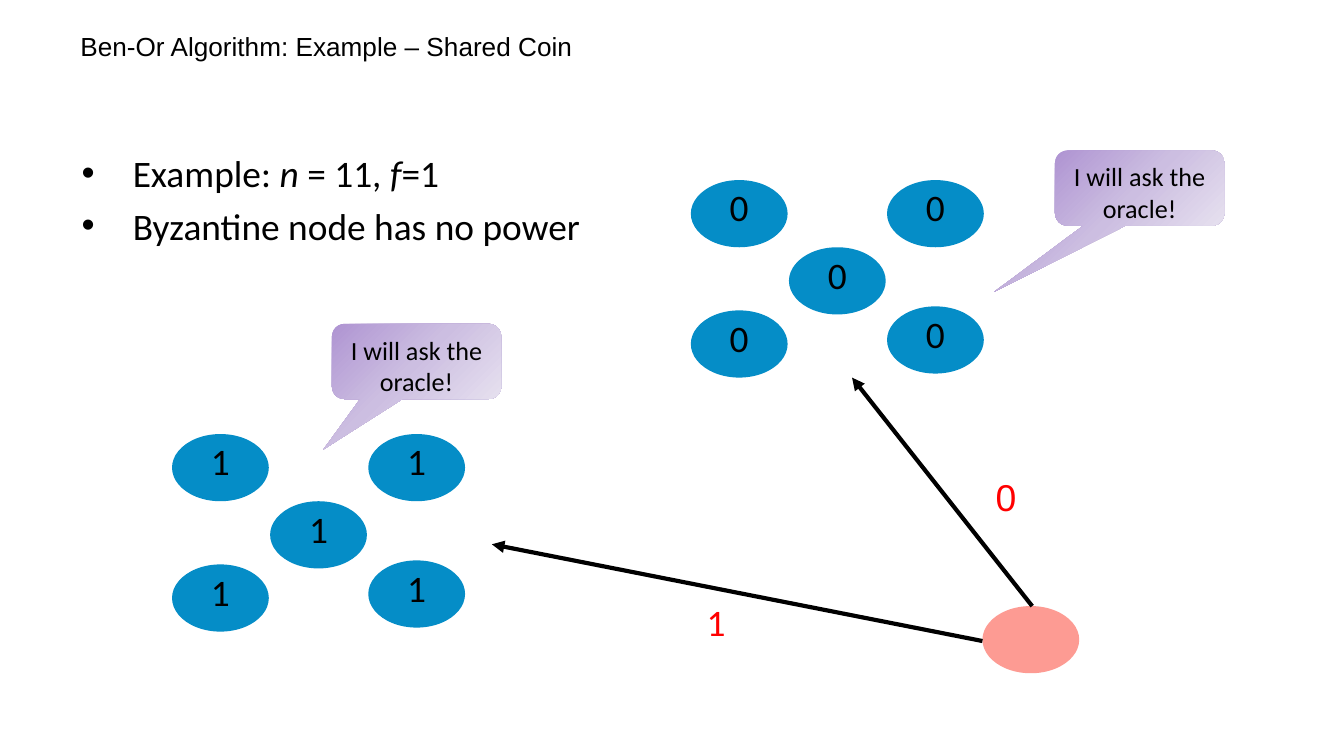
from copy import deepcopy

from lxml import etree
from pptx import Presentation
from pptx.dml.color import RGBColor
from pptx.enum.shapes import MSO_CONNECTOR, MSO_SHAPE
from pptx.enum.text import MSO_ANCHOR, PP_ALIGN
from pptx.oxml.ns import qn
from pptx.util import Inches, Pt

BLACK = RGBColor(0x00, 0x00, 0x00)
RED = RGBColor(0xFF, 0x00, 0x00)
BLUE = RGBColor(0x05, 0x8D, 0xC7)
PINK = RGBColor(0xFD, 0x9B, 0x93)
LILACS = [RGBColor(0xAF, 0x94, 0xD2), RGBColor(0xCC, 0xBE, 0xE1), RGBColor(0xE6, 0xE0, 0xEF)]
ELLIPSE, CALLOUT = MSO_SHAPE.OVAL, MSO_SHAPE.ROUNDED_RECTANGULAR_CALLOUT
STRAIGHT = MSO_CONNECTOR.STRAIGHT
CENTER, LEFT = PP_ALIGN.CENTER, PP_ALIGN.LEFT
TOP, MIDDLE = MSO_ANCHOR.TOP, MSO_ANCHOR.MIDDLE

# Node grid: outer nodes stand two columns apart, one node in the middle
COL, NODE_W, NODE_H = 0.73, 0.72, 0.5
NODES = [(2, 0.94), (2, 0), (0, 0.97), (0, 0), (1, 0.5)]

# A 16:9 slide
prs = Presentation()
prs.slide_width = Inches(10)
prs.slide_height = prs.slide_width * 9 // 16
s = prs.slides.add_slide(prs.slide_layouts[6])


def add_text(sp, paragraphs, size, font="Calibri", color=BLACK, align=CENTER, anchor=TOP, wrap=True):
    """Fill a shape with paragraphs, each a list of (text, italic) runs."""
    tf = sp.text_frame
    tf.word_wrap, tf.vertical_anchor = wrap, anchor
    for i, runs in enumerate(paragraphs):
        p = tf.paragraphs[0] if i == 0 else tf.add_paragraph()
        p.alignment = align
        for text, italic in runs:
            r = p.add_run()
            r.text = text
            r.font.size, r.font.name, r.font.italic = Pt(size), font, italic
            r.font.color.rgb = color
    return tf


def add_shape(kind, x, y, w, h):
    """Add a preset shape without shadow or outline."""
    sp = s.shapes.add_shape(kind, Inches(x), Inches(y), Inches(w), Inches(h))
    sp.shadow.inherit = False
    sp.line.fill.background()
    return sp


# Bullets, starting one line below the top of the box
sp = s.shapes.add_textbox(Inches(0.51), Inches(0.69), Inches(9.14), Inches(4.53))
tf = add_text(sp, [
    [("Example: ", False), ("n", True), (" = 11, ", False), ("f", True), ("=1", False)],
    [("Byzantine node has no power", False)],
], 20, align=LEFT)
tf.margin_top = Inches(0.43)
for i, p in enumerate(tf.paragraphs):
    p.space_before = Pt(4 * i)
    pPr = p._p.get_or_add_pPr()
    pPr.set("marL", str(Inches(0.38)))
    pPr.set("indent", str(-Inches(0.38)))
    etree.SubElement(pPr, qn("a:buFont"), typeface="Arial")
    etree.SubElement(pPr, qn("a:buChar"), char="•")

# Title
sp = s.shapes.add_textbox(Inches(0.5), Inches(0.14), Inches(9), Inches(0.4))
add_text(sp, [[("Ben-Or Algorithm: Example – Shared Coin", False)]], 14, "Arial", align=LEFT, anchor=MIDDLE)

# Byzantine node
sp = add_shape(ELLIPSE, 7.31, 4.51, NODE_W, NODE_H)
sp.fill.solid()
sp.fill.fore_color.rgb = PINK

# Two clusters of honest nodes
for value, x, y in [("1", 1.28, 3.23), ("0", 5.14, 1.34)]:
    for col, dy in NODES:
        sp = add_shape(ELLIPSE, x + col * COL, y + dy, NODE_W, NODE_H)
        sp.fill.solid()
        sp.fill.fore_color.rgb = BLUE
        tf = add_text(sp, [[(value, False)]], 20, anchor=MIDDLE)
        tf.margin_top, tf.margin_bottom = 0, Inches(0.1)

# Messages from the Byzantine node, each with its value
for x1, y1, x2, y2, value, font, x, y in [
    (7.31, 4.77, 3.66, 4.05, "1", "Calibri", 5.16, 4.41),
    (7.68, 4.51, 6.34, 2.81, "0", "Arial", 7.31, 3.48),
]:
    line = s.shapes.add_connector(STRAIGHT, Inches(x1), Inches(y1), Inches(x2), Inches(y2))
    line.line.color.rgb, line.line.width = BLACK, Pt(2.25)
    spPr = line._element.spPr
    etree.SubElement(spPr.find(qn("a:ln")), qn("a:tailEnd"), type="triangle")
    etree.SubElement(spPr, qn("a:effectLst"))
    sp = s.shapes.add_textbox(Inches(x), Inches(y), Inches(0.31), Inches(0.33))
    add_text(sp, [[(value, False)]], 20, font, RED, wrap=False)

# Speech bubbles
for x, y, tip_x, tip_y in [(7.85, 1.12, -0.86, 1.38), (2.47, 2.41, -0.55, 1.17)]:
    sp = add_shape(CALLOUT, x, y, 1.26, 0.56)
    sp.adjustments[0], sp.adjustments[1] = tip_x, tip_y
    sp.fill.gradient()
    sp.fill.gradient_angle = 315
    first = sp._element.spPr.find(".//" + qn("a:gs"))
    first.addnext(deepcopy(first))
    for stop, color, position in zip(sp.fill.gradient_stops, LILACS, (0, 0.5, 1)):
        stop.color.rgb, stop.position = color, position
    add_text(sp, [[("I will ask the oracle!", False)]], 14)

prs.save("out.pptx")
